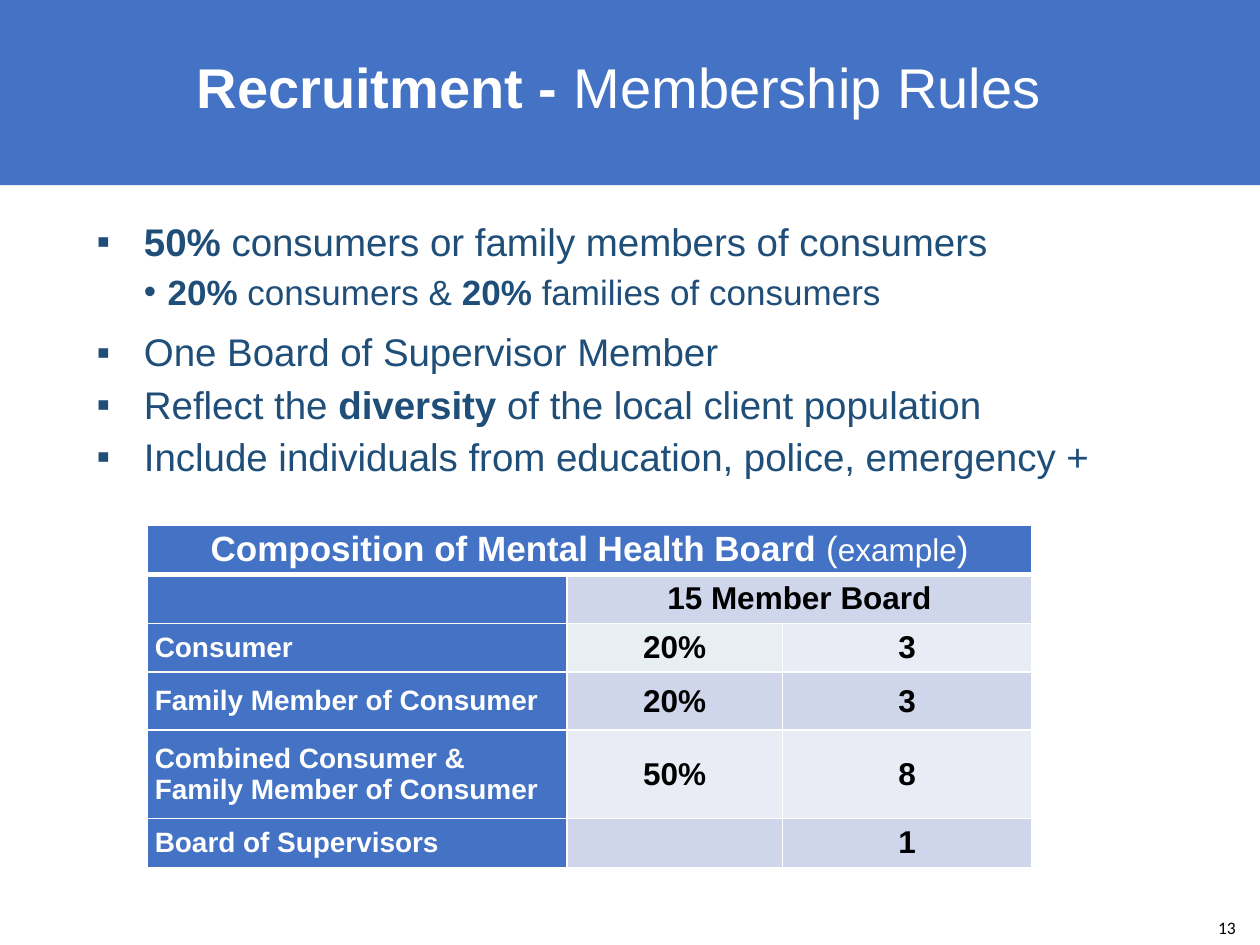
from lxml.etree import SubElement
from pptx import Presentation
from pptx.dml.color import RGBColor
from pptx.enum.shapes import MSO_SHAPE
from pptx.enum.text import MSO_ANCHOR as ANCHOR, PP_ALIGN as ALIGN
from pptx.oxml.ns import qn
from pptx.util import Pt

COLORS = {"blue": "4472C4", "navy": "1F4E79", "white": "FFFFFF", "black": "000000",
          "band": "CFD5EA", "light": "E9EBF5", "mint": "E8EFF3"}

# Text between ** marks is bold.
TITLE = "**Recruitment - **Membership Rules"
RULES = [
    (0, "**50%** consumers or family members of consumers"),
    (1, "**20%** consumers & **20%** families of consumers"),
    (0, "One Board of Supervisor Member"),
    (0, "Reflect the **diversity **of the local client population"),
    (0, "Include individuals from education, police, emergency +"),
]
# Per level: bullet, text size, left indent, hanging indent, space after
LEVELS = [("▪", 22, 27, 27, 0), ("•", 20, 40.5, 13.5, 6)]

TABLE_TITLE = [("**Composition of Mental Health Board **(", 20), ("example", 18), (")", 20)]
BOARD = "15 Member Board"
MEMBERS = [
    ("Consumer", "20%", "3"),
    ("Family Member of Consumer", "20%", "3"),
    ("Combined Consumer & Family Member of Consumer", "50%", "8"),
    ("Board of Supervisors", "", "1"),
]
COL_WIDTHS = [239.8, 123.1, 142.6]
ROW_HEIGHTS = [28, 28, 28, 33.1, 50.4, 28]


def rgb(name):
    return RGBColor.from_string(COLORS[name])


def add_runs(p, text, size, color, font="Arial"):
    """Append text to a paragraph, bold between ** marks."""
    for i, part in enumerate(text.split("**")):
        if part:
            r = p.add_run()
            r.text = part
            r.font.name, r.font.size, r.font.bold = font, Pt(size), i % 2 == 1
            r.font.color.rgb = rgb(color)


def add_text_box(s, left, top, width, height, anchor=ANCHOR.TOP):
    tf = s.shapes.add_textbox(Pt(left), Pt(top), Pt(width), Pt(height)).text_frame
    tf.word_wrap = True
    tf.vertical_anchor = anchor
    return tf


def set_bullet(p, char, indent, hanging):
    pPr = p._p.get_or_add_pPr()
    pPr.set("marL", str(Pt(indent)))
    pPr.set("indent", str(-Pt(hanging)))
    SubElement(pPr, qn("a:buFont"), typeface="Arial")
    SubElement(pPr, qn("a:buChar"), char=char)


def style_cell(cell, fill, bottom=1):
    """Set white borders, tight margins and the fill."""
    tcPr = cell._tc.get_or_add_tcPr()
    for side, width in (("L", 1), ("R", 1), ("T", 1), ("B", bottom)):
        ln = SubElement(tcPr, qn(f"a:ln{side}"), w=str(Pt(width)))
        SubElement(SubElement(ln, qn("a:solidFill")), qn("a:srgbClr"), val=COLORS["white"])
    cell.margin_left = cell.margin_right = Pt(4.3)
    cell.margin_top = cell.margin_bottom = 0
    cell.vertical_anchor = ANCHOR.MIDDLE
    cell.fill.solid()
    cell.fill.fore_color.rgb = rgb(fill)


def add_header(s):
    band = s.shapes.add_shape(MSO_SHAPE.RECTANGLE, 0, 0, Pt(720), Pt(105.8))
    band.shadow.inherit = False
    band.fill.solid()
    band.fill.fore_color.rgb = rgb("blue")
    band.line.fill.background()
    tf = add_text_box(s, 26, 12.2, 662.4, 78.5, ANCHOR.MIDDLE)
    tf.margin_left = 0
    p = tf.paragraphs[0]
    p.alignment, p.line_spacing, p.space_before = ALIGN.CENTER, 0.9, Pt(7.5)
    add_runs(p, TITLE, 32, "white")


def add_rules(s):
    tf = add_text_box(s, 48.2, 123.8, 604.8, 170)
    for i, (level, text) in enumerate(RULES):
        char, size, indent, hanging, after = LEVELS[level]
        p = tf.add_paragraph() if i else tf.paragraphs[0]
        p.level = level
        p.line_spacing, p.space_before, p.space_after = 0.9, Pt(6), Pt(after)
        set_bullet(p, char, indent, hanging)
        add_runs(p, text, size, "navy")


def add_board_table(s):
    table = s.shapes.add_table(len(ROW_HEIGHTS), len(COL_WIDTHS), Pt(84.2), Pt(300.2),
                               Pt(sum(COL_WIDTHS)), Pt(sum(ROW_HEIGHTS))).table
    for col, width in zip(table.columns, COL_WIDTHS):
        col.width = Pt(width)
    for row, height in zip(table.rows, ROW_HEIGHTS):
        row.height = Pt(height)

    rows = [("", "", ""), ("", BOARD, "")] + MEMBERS
    for r, texts in enumerate(rows):
        for c, text in enumerate(texts):
            cell = table.cell(r, c)
            label = r == 0 or c == 0
            fill = "blue" if label else "band" if r % 2 else "light"
            style_cell(cell, "mint" if (r, c) == (2, 1) else fill, 1 if r else 3)
            p = cell.text_frame.paragraphs[0]
            p.alignment = ALIGN.LEFT if r and c == 0 else ALIGN.CENTER
            if text:
                add_runs(p, f"**{text}**", 16 if label else 18, "white" if label else "black")

    table.cell(0, 0).merge(table.cell(0, 2))
    table.cell(1, 1).merge(table.cell(1, 2))
    for text, size in TABLE_TITLE:
        add_runs(table.cell(0, 0).text_frame.paragraphs[0], text, size, "white")


def add_page_number(s):
    tf = add_text_box(s, 689, 520.6, 31, 19.4)
    add_runs(tf.paragraphs[0], "13", 10, "black", "Calibri")


prs = Presentation()
prs.slide_width, prs.slide_height = Pt(720), Pt(540)
slide = prs.slides.add_slide(prs.slide_layouts[6])
add_header(slide)
add_page_number(slide)
add_rules(slide)
add_board_table(slide)
prs.save("out.pptx")
